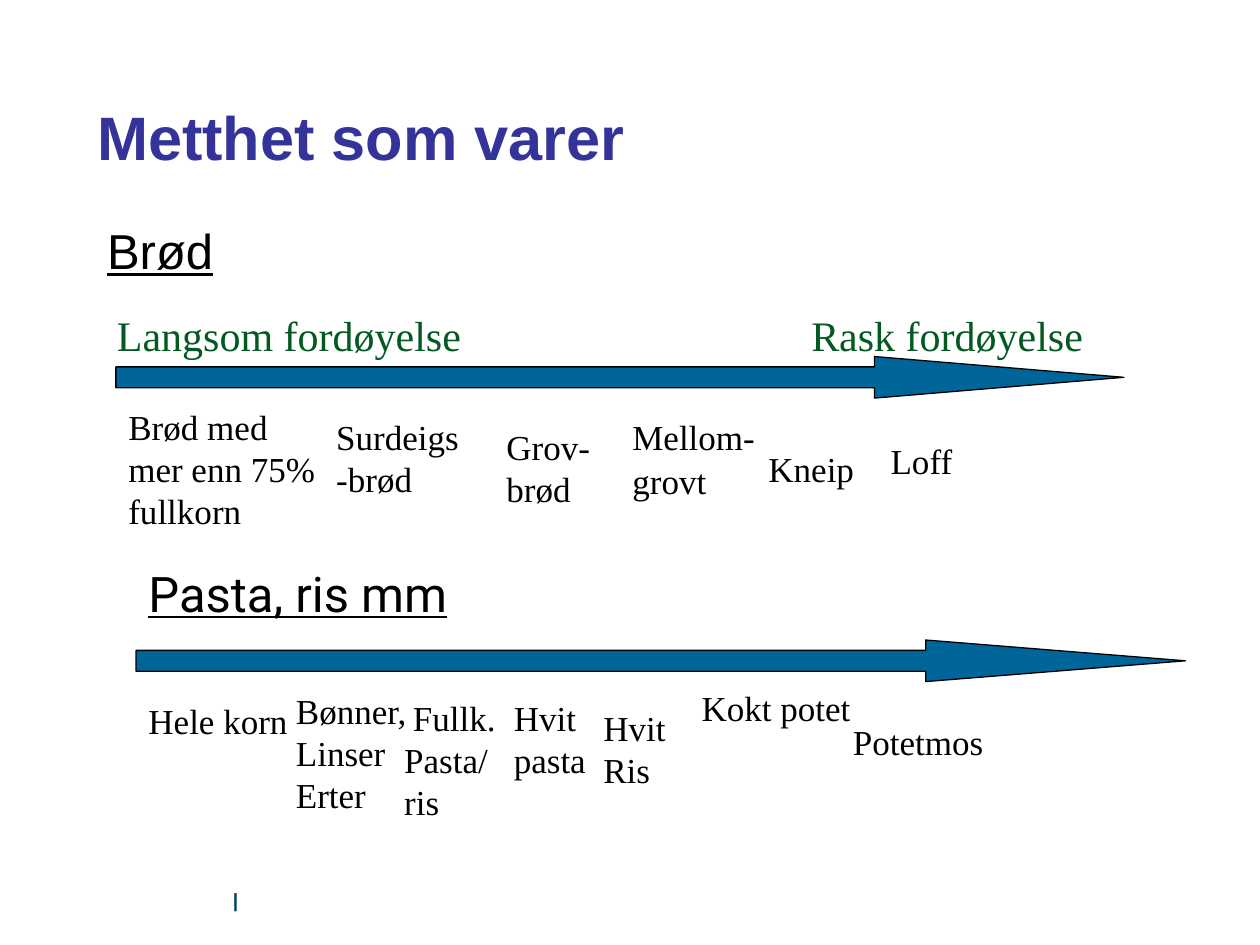
from dataclasses import dataclass

from lxml.etree import SubElement
from pptx import Presentation
from pptx.dml.color import RGBColor
from pptx.enum.shapes import MSO_SHAPE
from pptx.enum.text import MSO_ANCHOR, MSO_AUTO_SIZE, PP_ALIGN
from pptx.oxml.ns import qn
from pptx.util import Inches, Pt

BLACK = RGBColor(0x00, 0x00, 0x00)
INDIGO = RGBColor(0x33, 0x33, 0x99)
GREEN = RGBColor(0x03, 0x59, 0x22)
BLUE = RGBColor(0x00, 0x66, 0x99)
NAVY = RGBColor(0x00, 0x42, 0x5C)
SERIF = "Times New Roman"


@dataclass(frozen=True)
class Style:
    size: float
    face: str = SERIF
    color: RGBColor = BLACK
    bold: bool = False
    underline: bool = False


@dataclass(frozen=True)
class Label:
    lines: tuple[str, ...]
    left: float
    top: float
    width: float
    height: float
    style: Style
    wrap: bool = True
    space_before: float = 0


@dataclass(frozen=True)
class Scale:
    left: float
    top: float
    width: float
    head_ratio: float


FOOD = Style(20)
SPEED = Style(24, color=GREEN)
TITLE = Style(35, "Arial", INDIGO, bold=True)
BREAD_HEADING = Style(28, "Arial", underline=True)
PASTA_HEADING = Style(28, "Roboto", underline=True)
FOOTER = Style(11, "Arial", NAVY, bold=True)

SCALES = (Scale(0.92, 2.83, 8, 6), Scale(1.08, 5.08, 8.33, 6.25))

LABELS = (
    Label(("|",), 1.75, 7, 6, 0.33, FOOTER),
    Label(("Langsom fordøyelse",), 0.83, 2.41, 3.8, 0.5, SPEED),
    Label(("Rask fordøyelse",), 6.34, 2.41, 3.08, 0.5, SPEED),
    Label(("Brød med mer enn 75% fullkorn",), 0.92, 3.17, 1.69, 1.1, FOOD),
    Label(("Surdeigs", "-brød"), 2.57, 3.25, 1.25, 0.77, FOOD),
    Label(("Grov-", "brød"), 3.92, 3.33, 1.15, 0.77, FOOD),
    Label(("Mellom-", "grovt"), 4.92, 3.25, 1.25, 0.78, FOOD, space_before=1),
    Label(("Kneip",), 6, 3.5, 0.91, 0.43, FOOD),
    Label(("Loff",), 6.97, 3.44, 0.91, 0.43, FOOD),
    Label(("Pasta, ris mm",), 1.08, 4.42, 2.58, 0.57, PASTA_HEADING),
    Label(("Hele korn",), 1.08, 5.5, 1.36, 0.43, FOOD),
    Label(("Bønner,", "Linser", "Erter"), 2.25, 5.42, 1.09, 1.1, FOOD, False),
    Label((" Fullk.", "Pasta/ris"), 3.11, 5.48, 0.95, 1.1, FOOD),
    Label(("Hvit pasta",), 3.98, 5.48, 0.87, 0.77, FOOD),
    Label(("Hvit", "Ris"), 4.69, 5.56, 0.81, 0.77, FOOD),
    Label(("Kokt potet",), 5.47, 5.4, 1.45, 0.43, FOOD),
    Label(("Potetmos",), 6.67, 5.67, 1.35, 0.43, FOOD),
)


def add_run(paragraph, text: str, style: Style) -> None:
    run = paragraph.add_run()
    run.text = text
    font = run.font
    font.size = Pt(style.size)
    font.name = style.face
    font.color.rgb = style.color
    font.bold = style.bold
    font.underline = style.underline


def place(holder, left: float, top: float, width: float, height: float) -> None:
    holder.left, holder.top = Inches(left), Inches(top)
    holder.width, holder.height = Inches(width), Inches(height)


def add_label(slide, label: Label) -> None:
    box = slide.shapes.add_textbox(
        Inches(label.left), Inches(label.top), Inches(label.width), Inches(label.height)
    )
    frame = box.text_frame
    frame.word_wrap = label.wrap
    frame.auto_size = MSO_AUTO_SIZE.SHAPE_TO_FIT_TEXT
    for index, line in enumerate(label.lines):
        paragraph = frame.add_paragraph() if index else frame.paragraphs[0]
        if index and label.space_before:
            paragraph.space_before = Pt(label.space_before)
        add_run(paragraph, line, label.style)


def add_scale(slide, scale: Scale) -> None:
    arrow = slide.shapes.add_shape(
        MSO_SHAPE.RIGHT_ARROW,
        Inches(scale.left), Inches(scale.top), Inches(scale.width), Inches(0.33),
    )
    arrow.adjustments[0] = 0.5
    arrow.adjustments[1] = scale.head_ratio
    arrow.shadow.inherit = False
    arrow.fill.solid()
    arrow.fill.fore_color.rgb = BLUE
    arrow.line.color.rgb = BLACK
    arrow.line.width = Pt(0.75)


def fill_title(title) -> None:
    place(title, 0.67, 0.8, 8.9, 0.56)
    frame = title.text_frame
    frame.auto_size = MSO_AUTO_SIZE.NONE
    frame.vertical_anchor = MSO_ANCHOR.MIDDLE
    paragraph = frame.paragraphs[0]
    paragraph.alignment = PP_ALIGN.LEFT
    add_run(paragraph, "Metthet som varer", TITLE)


def fill_body(body) -> None:
    place(body, 0.75, 1.7, 8.5, 4.75)
    body.text_frame.auto_size = MSO_AUTO_SIZE.NONE
    paragraph = body.text_frame.paragraphs[0]
    paragraph.space_before = Pt(0)
    properties = paragraph._p.get_or_add_pPr()
    properties.set("marL", str(Inches(0.38)))
    properties.set("indent", str(Inches(-0.38)))
    SubElement(properties, qn("a:buNone"))
    add_run(paragraph, "Brød", BREAD_HEADING)


def main() -> None:
    deck = Presentation()
    deck.slide_width, deck.slide_height = Inches(10), Inches(7.5)
    slide = deck.slides.add_slide(deck.slide_layouts[1])
    fill_title(slide.shapes.title)
    fill_body(slide.placeholders[1])
    for scale in SCALES:
        add_scale(slide, scale)
    for label in LABELS:
        add_label(slide, label)
    deck.save("out.pptx")


if __name__ == "__main__":
    main()
